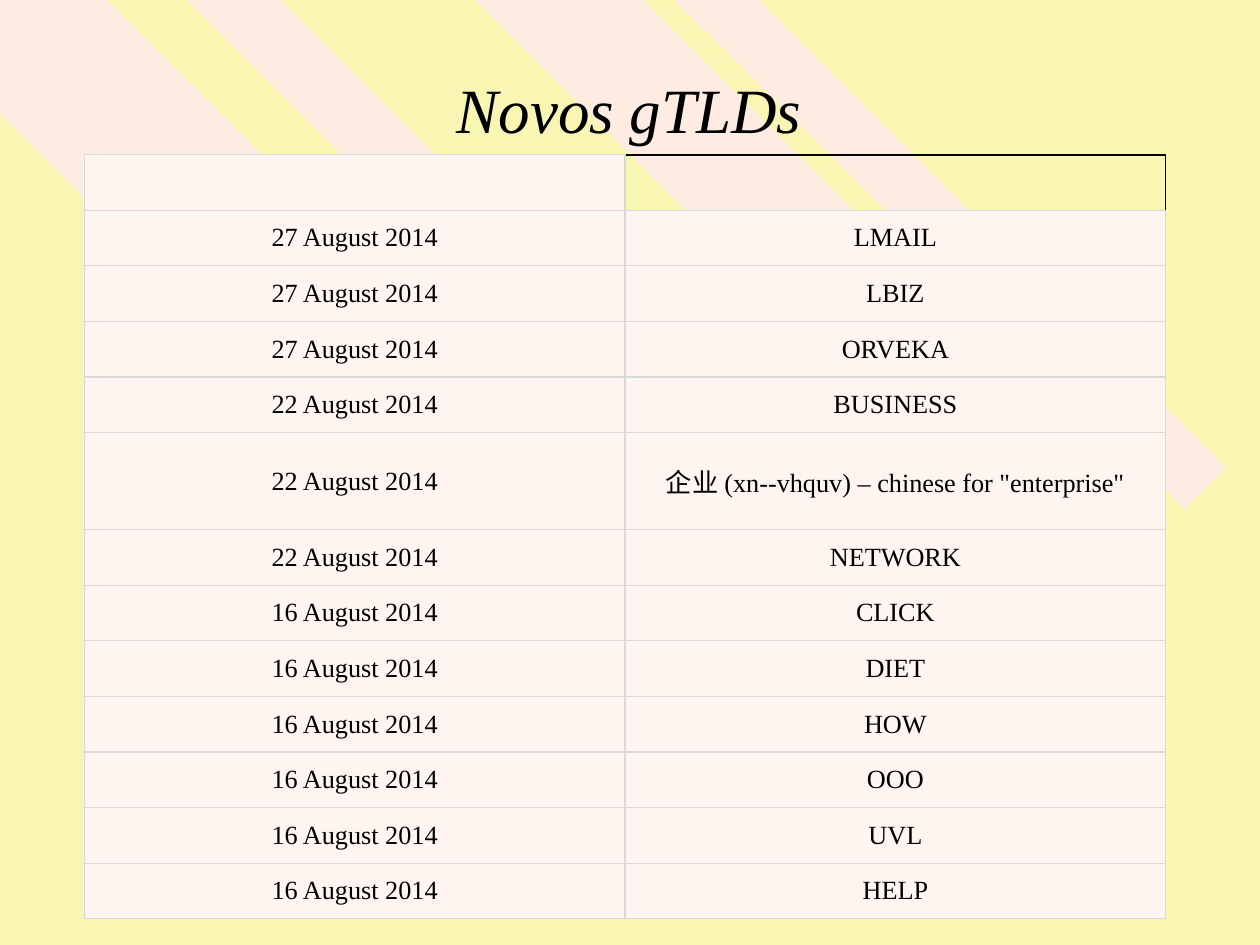
"""Build the slide that lists new gTLDs over diagonal bands."""
from dataclasses import dataclass

from lxml import etree
from pptx import Presentation
from pptx import util as u
from pptx.dml.color import RGBColor
from pptx.enum import text
from pptx.oxml import ns

COLORS = {
    "background": "F8F6B2",
    "band": "FEECE2",
    "cell": "FEF5F1",
    "grid": "D8D8D8",
    "ink": "000000",
}
FONT = "Times New Roman"
COLUMN_WIDTH = u.Cm(10.9)
ROW_HEIGHT = u.Cm(1.12)
TALL_ROW_HEIGHT = u.Cm(1.96)
TALL_ROW = 5


@dataclass(frozen=True)
class Band:
    points: tuple[tuple[float, float], ...]


@dataclass(frozen=True)
class Entry:
    date: str
    name: str


@dataclass(frozen=True)
class Border:
    color: str
    points: float


GRID = Border("grid", 0.75)
FRAME = Border("ink", 1)

BANDS = (
    Band(((18.16, 15.98), (2.16, 0), (0, 0), (0, 2.29), (15.93, 18.21))),
    Band(((5.66, 0), (19.89, 14.22), (18.95, 15.19), (3.76, 0))),
    Band(((12.95, 0), (23.55, 10.59), (21.84, 12.27), (9.58, 0))),
    Band(((13.59, 0), (23.88, 10.26), (24.71, 9.42), (15.29, 0))),
)

ENTRIES = (
    Entry("", ""),
    Entry("27 August 2014", "LMAIL"),
    Entry("27 August 2014", "LBIZ"),
    Entry("27 August 2014", "ORVEKA"),
    Entry("22 August 2014", "BUSINESS"),
    Entry("22 August 2014", '企业 (xn--vhquv) – chinese for "enterprise"'),
    Entry("22 August 2014", "NETWORK"),
    Entry("16 August 2014", "CLICK"),
    Entry("16 August 2014", "DIET"),
    Entry("16 August 2014", "HOW"),
    Entry("16 August 2014", "OOO"),
    Entry("16 August 2014", "UVL"),
    Entry("16 August 2014", "HELP"),
)


def rgb(name: str) -> RGBColor:
    """Look up a named colour."""
    return RGBColor.from_string(COLORS[name])


def add_span(para, words: str, size: float, italic: bool = False) -> None:
    """Add one centred run in the slide's font."""
    para.alignment = text.PP_ALIGN.CENTER
    span = para.add_run()
    span.text = words
    span.font.name = FONT
    span.font.size = u.Pt(size)
    span.font.italic = italic
    span.font.color.rgb = rgb("ink")


def draw_band(page, band: Band) -> None:
    """Draw one diagonal background band."""
    start, *rest = [(u.Cm(x), u.Cm(y)) for x, y in band.points]
    builder = page.shapes.build_freeform(*start)
    builder.add_line_segments(rest, close=True)
    shape = builder.convert_to_shape()
    shape.shadow.inherit = False
    shape.fill.solid()
    shape.fill.fore_color.rgb = rgb("band")
    shape.line.fill.background()


def write_title(page, words: str) -> None:
    """Place the title in front of the bands."""
    box = page.shapes.title
    box.left, box.top = u.Cm(2.74), u.Cm(0.69)
    box.width, box.height = u.Cm(19.89), u.Cm(3.18)
    page.shapes._spTree.append(box._element)
    frame = box.text_frame
    frame.auto_size = text.MSO_AUTO_SIZE.NONE
    frame.vertical_anchor = text.MSO_ANCHOR.MIDDLE
    para = frame.paragraphs[0]
    para.line_spacing = 0.89
    add_span(para, words, 36, italic=True)


def set_border(cell, side: str, border: Border) -> None:
    """Add one border line to a cell."""
    properties = cell._tc.get_or_add_tcPr()
    line = etree.SubElement(properties, ns.qn(f"a:ln{side}"), w=str(u.Pt(border.points)))
    fill = etree.SubElement(line, ns.qn("a:solidFill"))
    etree.SubElement(fill, ns.qn("a:srgbClr"), val=COLORS[border.color])


def format_cell(cell, words: str, open_cell: bool) -> None:
    """Give a cell its borders, fill, margins and text."""
    for side in "LRTB":
        set_border(cell, side, FRAME if open_cell and side in "RT" else GRID)
    if open_cell:
        cell.fill.background()
    else:
        cell.fill.solid()
        cell.fill.fore_color.rgb = rgb("cell")
    cell.margin_left = cell.margin_right = u.Cm(0.2)
    cell.margin_top = cell.margin_bottom = u.Cm(0.1)
    cell.vertical_anchor = text.MSO_ANCHOR.MIDDLE
    if words:
        add_span(cell.text_frame.paragraphs[0], words, 15)


def draw_table(page, entries: tuple[Entry, ...]) -> None:
    """Draw the table of dates and domain names."""
    height = ROW_HEIGHT * (len(entries) - 1) + TALL_ROW_HEIGHT
    table = page.shapes.add_table(
        len(entries), 2, u.Cm(1.7), u.Cm(3.12), COLUMN_WIDTH * 2, height
    ).table
    table.first_row = table.horz_banding = False
    for column in table.columns:
        column.width = COLUMN_WIDTH
    for index, entry in enumerate(entries):
        table.rows[index].height = TALL_ROW_HEIGHT if index == TALL_ROW else ROW_HEIGHT
        for position, words in enumerate((entry.date, entry.name)):
            format_cell(table.cell(index, position), words, (index, position) == (0, 1))


def main() -> None:
    """Assemble and save the deck."""
    deck = Presentation()
    deck.slide_width, deck.slide_height = u.Cm(25.4), u.Cm(19.05)
    page = deck.slides.add_slide(deck.slide_layouts[5])
    page.background.fill.solid()
    page.background.fill.fore_color.rgb = rgb("background")
    for band in BANDS:
        draw_band(page, band)
    write_title(page, "Novos gTLDs")
    draw_table(page, ENTRIES)
    deck.save("out.pptx")


if __name__ == "__main__":
    main()
